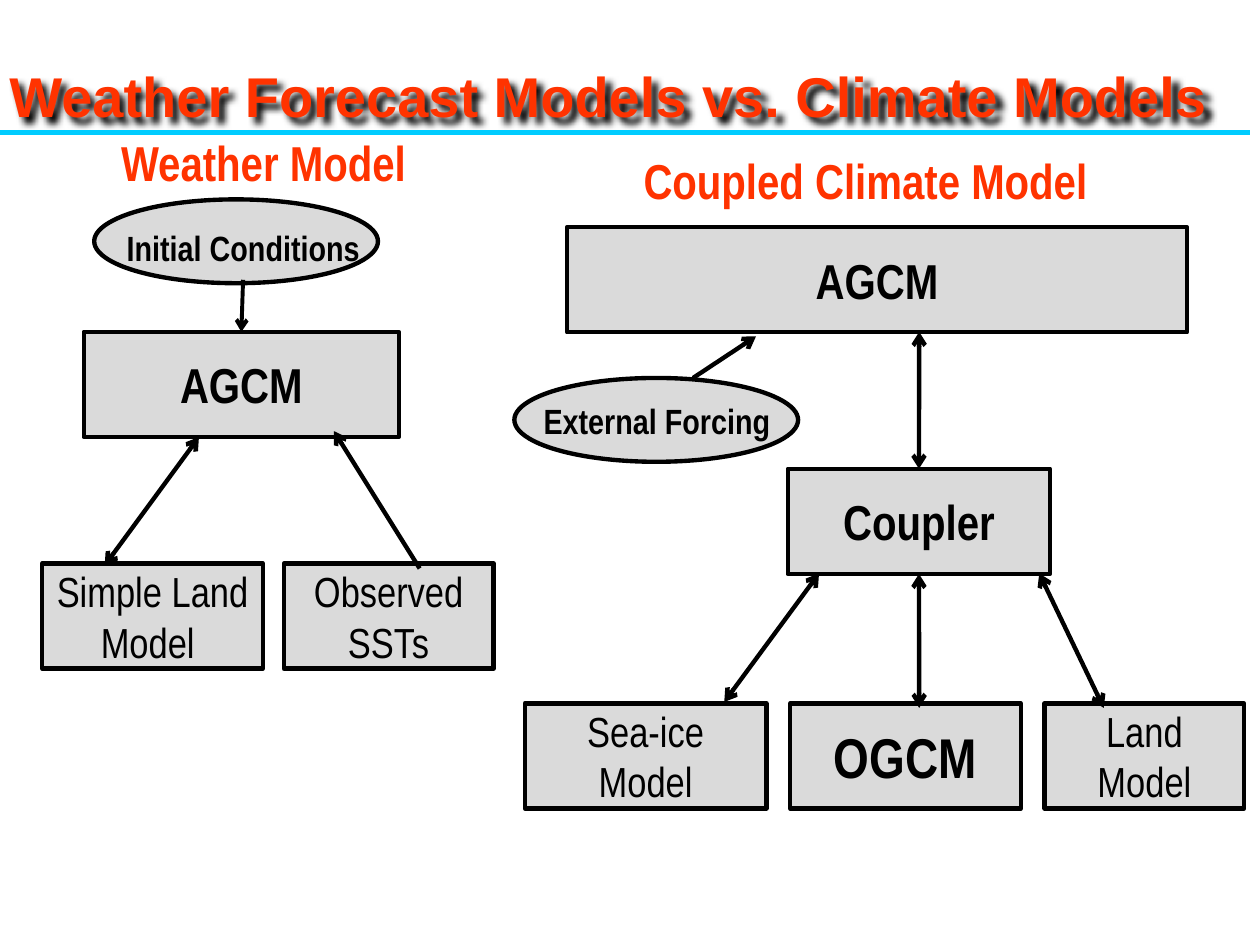
from typing import NamedTuple, Optional

from lxml.etree import SubElement
from pptx import Presentation
from pptx.dml.color import RGBColor
from pptx.enum.shapes import MSO_CONNECTOR, MSO_SHAPE
from pptx.enum.text import MSO_ANCHOR, MSO_AUTO_SIZE, PP_ALIGN
from pptx.oxml import parse_xml
from pptx.oxml.ns import nsdecls, qn
from pptx.util import Cm, Pt


class Theme(NamedTuple):
    red: RGBColor = RGBColor(0xFF, 0x33, 0x00)
    cyan: RGBColor = RGBColor(0x00, 0xCC, 0xFF)
    grey: RGBColor = RGBColor(0xDA, 0xDA, 0xDA)
    black: RGBColor = RGBColor(0, 0, 0)
    sans: str = "Arial"
    narrow: str = "Arial Narrow"
    big: int = 32
    head: int = 28
    body: int = 24
    small: int = 20
    line: float = 2.5


THEME = Theme()
BOX_H = 2.12
OVAL_W, OVAL_H = 5.72, 1.69


# All lengths below are in centimetres
class Box(NamedTuple):
    text: str
    left: float
    top: float
    width: float
    size: int = THEME.body
    bold: bool = False


class Label(NamedTuple):
    text: str
    left: float
    top: float
    width: float
    height: float
    size: int
    color: RGBColor


class Arrow(NamedTuple):
    start: tuple[float, float]
    end: tuple[float, float]
    head: bool = True
    tail: bool = True
    width: float = THEME.line
    begin: Optional[tuple[str, int]] = None  # box key and side
    finish: Optional[tuple[str, int]] = None


LOW, MID = 14.18, 11.36  # tops of the bottom rows
BOXES = {
    "coupler": Box("Coupler", 15.88, 9.45, 5.29, THEME.head, True),
    "climate": Box("AGCM", 11.43, 4.58, 12.5, THEME.head, True),
    "ice": Box("Sea-ice Model", 10.58, LOW, 4.87),
    "ocean": Box("OGCM", 15.93, LOW, 4.65, THEME.big, True),
    "land": Box("Land Model", 21.06, LOW, 4.02),
    "weather": Box("AGCM", 1.69, 6.69, 6.35, THEME.head, True),
    "simple": Box("Simple Land Model ", 0.85, MID, 4.45),
    "sst": Box("Observed SSTs", 5.72, MID, 4.23),
}
OVALS = [(1.9, 4.02), (10.37, 7.62)]
LABELS = [
    Label("Weather Model", 2.16, 2.54, 6.3, 1.45, THEME.head, THEME.red),
    Label("Coupled Climate Model", 12.67, 2.9, 9.55, 1.45, THEME.head, THEME.red),
    Label("Initial Conditions", 2.29, 4.45, 5.23, 1.12, THEME.small, THEME.black),
    Label("External Forcing", 10.69, 7.92, 5.11, 1.12, THEME.small, THEME.black),
]
ARROWS = [
    Arrow((18.53, 6.69), (18.53, 9.45), finish=("coupler", 0)),
    Arrow((18.53, 11.57), (18.53, 14.27), begin=("coupler", 2)),
    Arrow((20.95, 11.56), (22.25, 14.27)),
    Arrow((16.51, 11.56), (14.6, 14.15)),
    Arrow((4.01, 8.81), (2.11, 11.4)),
    Arrow((6.73, 8.69), (8.46, 11.46), tail=False),
    Arrow((4.9, 5.64), (4.87, 6.69), head=False, width=2.25, finish=("weather", 0)),
    Arrow((13.97, 7.62), (15.24, 6.78), head=False),
]


def write(shape, text: str, size: int, color: RGBColor, bold: bool, name: str) -> None:
    """Put one centred paragraph in a shape."""
    para = shape.text_frame.paragraphs[0]
    para.alignment = PP_ALIGN.CENTER
    run = para.add_run()
    run.text = text
    for key, value in {"size": Pt(size), "bold": bold, "name": name}.items():
        setattr(run.font, key, value)
    run.font.color.rgb = color


def add_node(slide, kind, left: float, top: float, width: float, height: float):
    """Draw a grey outlined shape."""
    node = slide.shapes.add_shape(kind, Cm(left), Cm(top), Cm(width), Cm(height))
    node.shadow.inherit = False
    node.fill.solid()
    node.fill.fore_color.rgb = THEME.grey
    node.line.color.rgb = THEME.black
    node.line.width = Pt(THEME.line)
    return node


def add_box(slide, box: Box):
    node = add_node(slide, MSO_SHAPE.RECTANGLE, box.left, box.top, box.width, BOX_H)
    frame = {"word_wrap": True, "vertical_anchor": MSO_ANCHOR.MIDDLE}
    for key, value in frame.items():
        setattr(node.text_frame, key, value)
    write(node, box.text, box.size, THEME.black, box.bold, THEME.narrow)
    return node


def add_label(slide, label: Label) -> None:
    area = map(Cm, (label.left, label.top, label.width, label.height))
    text = slide.shapes.add_textbox(*area)
    frame = {"word_wrap": False, "auto_size": MSO_AUTO_SIZE.SHAPE_TO_FIT_TEXT}
    for key, value in frame.items():
        setattr(text.text_frame, key, value)
    write(text, label.text, label.size, label.color, True, THEME.narrow)


def add_line(slide, start, end, color: RGBColor, width: float):
    points = map(Cm, (*start, *end))
    line = slide.shapes.add_connector(MSO_CONNECTOR.STRAIGHT, *points)
    line.line.color.rgb = color
    line.line.width = Pt(width)
    SubElement(line._element.spPr, qn("a:effectLst"))
    return line


def add_arrow(slide, arrow: Arrow, nodes: dict) -> None:
    line = add_line(slide, arrow.start, arrow.end, THEME.black, arrow.width)
    if arrow.begin:
        line.begin_connect(nodes[arrow.begin[0]], arrow.begin[1])
    if arrow.finish:
        line.end_connect(nodes[arrow.finish[0]], arrow.finish[1])
    for tag, shown in (("a:headEnd", arrow.head), ("a:tailEnd", arrow.tail)):
        if shown:
            SubElement(line.line._get_or_add_ln(), qn(tag), type="arrow")


def add_title(slide) -> None:
    title = slide.shapes.title
    place = {"left": -0.43, "top": 0.97, "width": 25.4, "height": 1.9}
    for key, value in place.items():
        setattr(title, key, Cm(value))
    title.text_frame.vertical_anchor = MSO_ANCHOR.MIDDLE
    text = "Weather Forecast Models vs. Climate Models"
    write(title, text, THEME.big, THEME.red, True, THEME.sans)
    # Soft shadow to the lower right
    title._element.spPr.append(parse_xml(
        f'<a:effectLst {nsdecls("a")}>'
        '<a:outerShdw blurRad="50800" dist="50800" dir="2700000">'
        '<a:srgbClr val="000000"/></a:outerShdw></a:effectLst>'))


def main() -> None:
    deck = Presentation()
    deck.slide_width, deck.slide_height = Cm(25.4), Cm(19.05)
    slide = deck.slides.add_slide(deck.slide_layouts[5])

    # Heading
    add_title(slide)
    add_line(slide, (-0.2, 2.67), (25.2, 2.67), THEME.cyan, THEME.line)

    # Model parts
    nodes = {key: add_box(slide, box) for key, box in BOXES.items()}
    for left, top in OVALS:
        add_node(slide, MSO_SHAPE.OVAL, left, top, OVAL_W, OVAL_H)

    # Captions and flows
    for label in LABELS:
        add_label(slide, label)
    for arrow in ARROWS:
        add_arrow(slide, arrow, nodes)

    deck.save("out.pptx")


if __name__ == "__main__":
    main()
